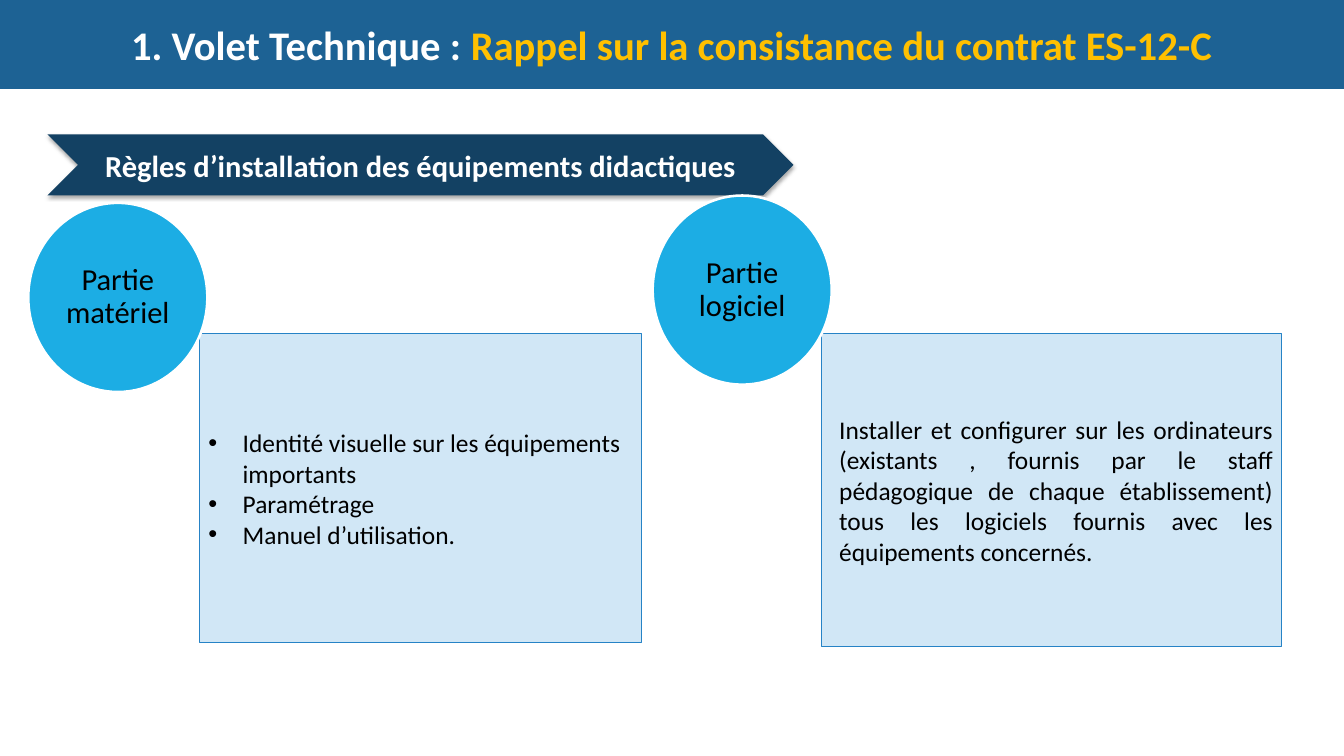
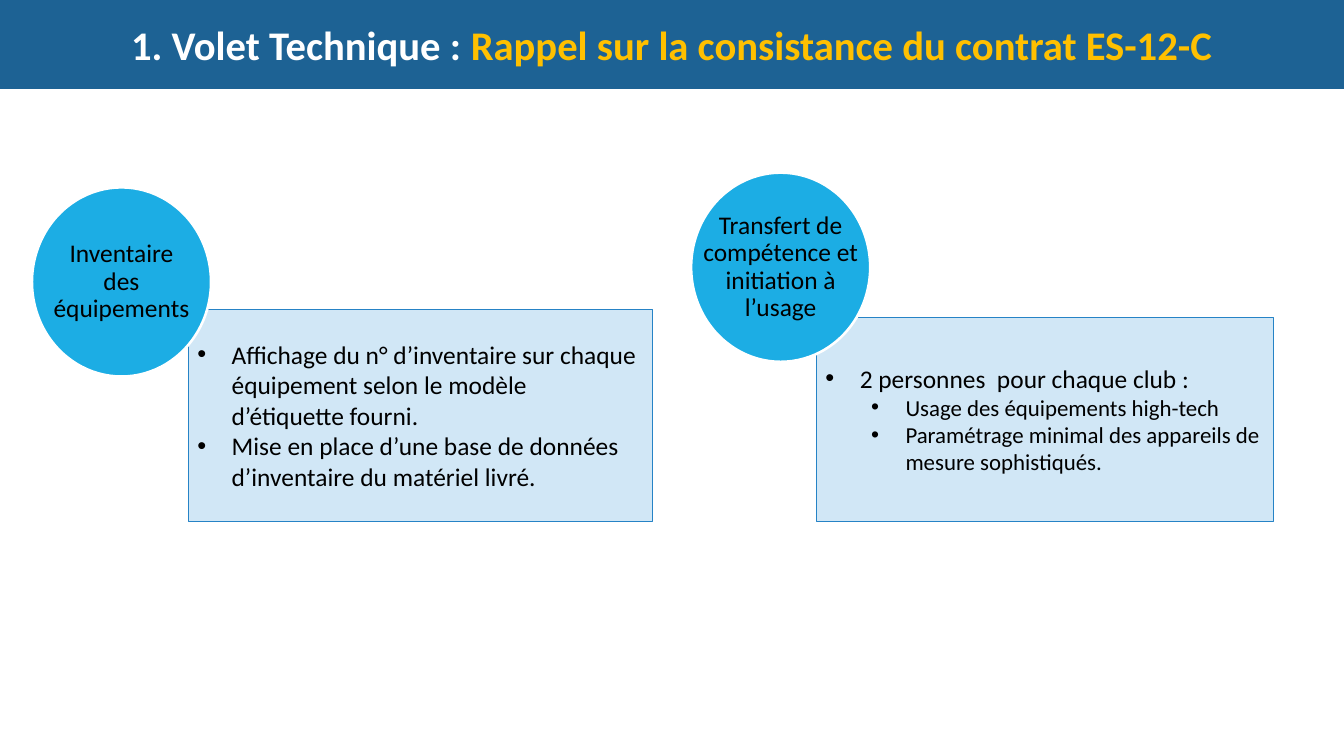
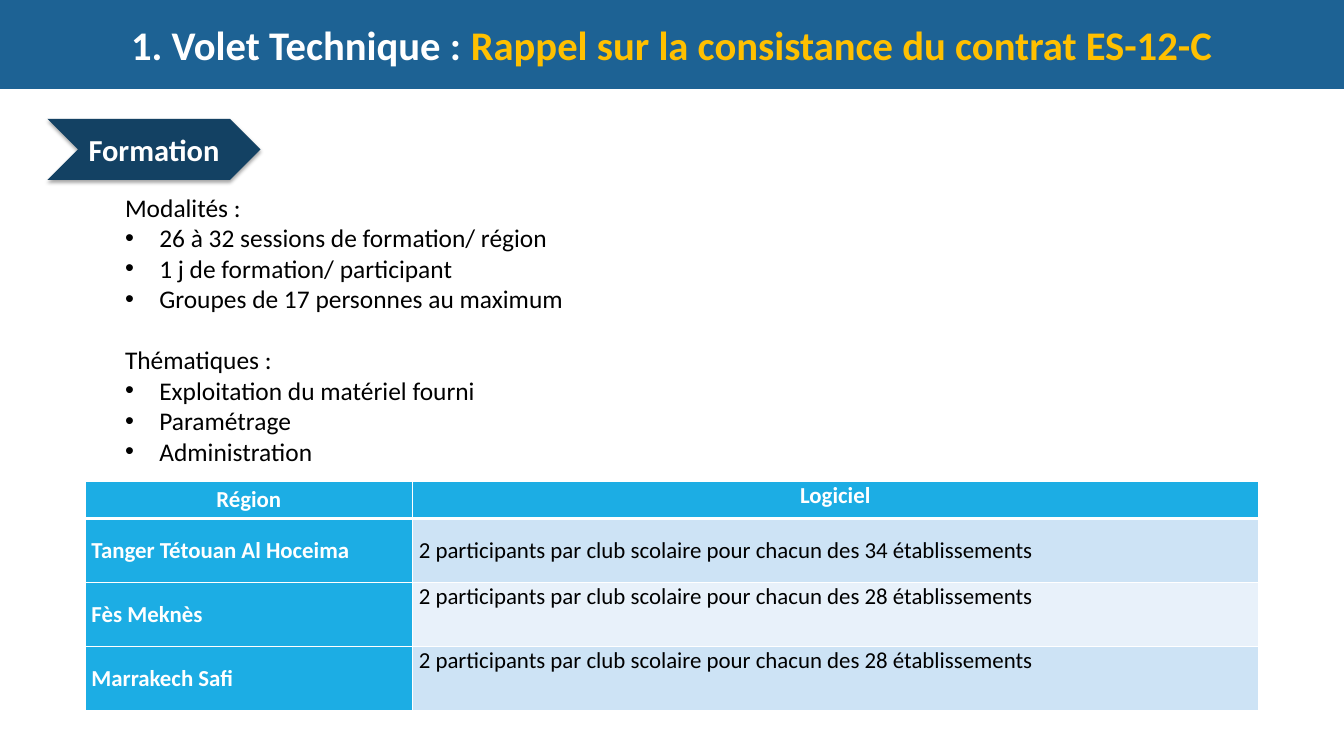
from lxml.etree import SubElement
from pptx import Presentation
from pptx.dml.color import RGBColor
from pptx.enum.shapes import MSO_SHAPE
from pptx.enum.text import MSO_ANCHOR, PP_ALIGN
from pptx.oxml import parse_xml
from pptx.oxml.ns import nsdecls, qn
from pptx.util import Pt

WIDTH, HEIGHT = 1058.4, 595.44
FONT = "Calibri"
COLORS = {
    "band": "1D6294", "accent": "FFC000", "chevron": "134163",
    "circle": "1CADE4", "card": "D1E7F6", "card_line": "2683C6",
    "row_dark": "CDE3F5", "row_light": "E8F1FA",
    "white": "FFFFFF", "black": "000000",
}

TITLE = [("1. Volet Technique : ", "white"),
         ("Rappel sur la consistance du contrat ES-12-C", "accent")]

# Paragraph styles: size, left margin, hanging indent, bullet, level, alignment
STYLES = {
    "plain": (20, 0, 0, False, 0, PP_ALIGN.LEFT),
    "bullet": (20, 27, -27, True, 0, PP_ALIGN.LEFT),
    "sub": (18, 63, -27, True, 1, PP_ALIGN.LEFT),
    "justified": (20, 7.2, 0, False, 0, PP_ALIGN.JUSTIFY),
}

CIRCLE_SIZE = (141, 149)
CHEVRON_LEFT, CHEVRON_HEIGHT = 37.4, 48.2

# Each topic: circle label, size and corner, then card box and paragraphs
INSTALLATION = {
    "chevron": ("Règles d’installation des équipements didactiques", 105.8, 587.5),
    "topics": [
        ("Partie\vmatériel", 24, (22.3, 159.8), (157, 262.8, 347.8, 243.4), [
            ("bullet", "Identité visuelle sur les équipements importants"),
            ("bullet", "Paramétrage"),
            ("bullet", "Manuel d’utilisation."),
        ]),
        ("Partie\vlogiciel", 24, (514, 154), (646.6, 262.8, 362.9, 246.2), [
            ("justified", "Installer et configurer sur les ordinateurs (existants , "
             "fournis par le staff pédagogique de chaque établissement) tous les "
             "logiciels fournis avec les équipements concernés."),
        ]),
    ],
}
SUPPORT = {
    "topics": [
        ("Inventaire\vdes\véquipements", 20, (25.2, 147.6), (148.3, 243.4, 365.8, 167), [
            ("bullet", "Affichage du n° d’inventaire sur chaque équipement selon "
             "le modèle d’étiquette fourni."),
            ("bullet", "Mise en place d’une base de données d’inventaire du "
             "matériel livré."),
        ]),
        ("Transfert de\vcompétence et\vinitiation à\vl’usage", 20, (544.3, 136),
         (643, 249.8, 360, 160.6), [
            ("bullet", "2 personnes  pour chaque club :"),
            ("sub", "Usage des équipements high-tech"),
            ("sub", "Paramétrage minimal des appareils de mesure sophistiqués."),
        ]),
    ],
}
TRAINING = {
    "chevron": ("Formation", 93.6, 167.8),
    "sections": [
        ("Modalités :", ["26 à 32 sessions de formation/ région",
                         "1 j de formation/ participant",
                         "Groupes de 17 personnes au maximum"]),
        ("Thématiques :", ["Exploitation du matériel fourni",
                           "Paramétrage", "Administration"]),
    ],
    "table": [
        ("Région", "Logiciel"),
        ("Tanger Tétouan Al Hoceima",
         "2 participants par club scolaire pour chacun des 34 établissements"),
        ("Fès Meknès",
         "2 participants par club scolaire pour chacun des 28 établissements"),
        ("Marrakech Safi",
         "2 participants par club scolaire pour chacun des 28 établissements"),
    ],
}
SECTIONS_BOX = (91.4, 147.6, 756, 225.4)
SECTION_GAP = 24
TABLE_CORNER = (67, 379.4)
COLUMN_WIDTHS = (257.8, 666)
ROW_HEIGHTS = (28.8, 50.4, 50.4, 50.4)


def rgb(name):
    return RGBColor.from_string(COLORS[name])


def set_font(font, size, color, bold=False):
    font.name, font.size, font.bold = FONT, Pt(size), bold
    font.color.rgb = rgb(color)


def add_shape(s, kind, box, fill, line=None, line_width=0.75):
    sp = s.shapes.add_shape(kind, *map(Pt, box))
    sp.shadow.inherit = False
    sp.fill.solid()
    sp.fill.fore_color.rgb = rgb(fill)
    if line:
        sp.line.color.rgb = rgb(line)
        sp.line.width = Pt(line_width)
    else:
        sp.line.fill.background()
    sp.text_frame.vertical_anchor = MSO_ANCHOR.MIDDLE
    return sp


def set_label(sp, text, size, color, bold=False):
    """Centre a short label that keeps its own line breaks."""
    tf = sp.text_frame
    tf.word_wrap = False
    tf.text = text
    p = tf.paragraphs[0]
    p.alignment = PP_ALIGN.CENTER
    set_font(p.font, size, color, bold)
    return p


def fill_paragraphs(tf, items):
    tf.word_wrap = True
    for i, (style, text) in enumerate(items):
        size, margin, indent, bullet, level, align = STYLES[style]
        p = tf.paragraphs[0] if i == 0 else tf.add_paragraph()
        p.text, p.level, p.alignment = text, level, align
        set_font(p.font, size, "black")
        pPr = p._p.get_or_add_pPr()
        pPr.set("marL", str(Pt(margin)))
        pPr.set("indent", str(Pt(indent)))
        if bullet:
            pPr.insert(0, parse_xml(f'<a:buChar {nsdecls("a")} char="•"/>'))
            pPr.insert(0, parse_xml(f'<a:buFont {nsdecls("a")} typeface="Arial"/>'))


def add_title(s):
    sp = add_shape(s, MSO_SHAPE.RECTANGLE, (0, 0, WIDTH, 70), "band")
    p = sp.text_frame.paragraphs[0]
    p.alignment = PP_ALIGN.CENTER
    for text, color in TITLE:
        r = p.add_run()
        r.text = text
        set_font(r.font, 32, color, True)


def add_chevron(s, text, top, width):
    sp = add_shape(s, MSO_SHAPE.CHEVRON,
                   (CHEVRON_LEFT, top, width, CHEVRON_HEIGHT), "chevron")
    effects = sp._element.spPr.find(qn("a:effectLst"))
    effects.append(parse_xml(
        f'<a:outerShdw {nsdecls("a")} blurRad="{Pt(3.1)}" dist="{Pt(1.8)}" '
        'dir="5400000" rotWithShape="0"><a:srgbClr val="000000">'
        '<a:alpha val="35000"/></a:srgbClr></a:outerShdw>'))
    set_label(sp, text, 24, "white", True)


def add_topic(s, label, size, corner, card_box, items):
    card = add_shape(s, MSO_SHAPE.RECTANGLE, card_box, "card", "card_line")
    fill_paragraphs(card.text_frame, items)
    circle = add_shape(s, MSO_SHAPE.OVAL, corner + CIRCLE_SIZE, "circle", "white", 2)
    set_label(circle, label, size, "black").line_spacing = 0.9


def add_sections(s, sections):
    items = []
    for heading, points in sections:
        items.append(("plain", heading))
        items += [("bullet", point) for point in points]
    tf = s.shapes.add_textbox(*map(Pt, SECTIONS_BOX)).text_frame
    fill_paragraphs(tf, items)
    for p, (style, _) in list(zip(tf.paragraphs, items))[1:]:
        if style == "plain":
            p.space_before = Pt(SECTION_GAP)


def set_borders(cell, **widths):
    tcPr = cell._tc.get_or_add_tcPr()
    for side in "LRTB":
        ln = SubElement(tcPr, qn(f"a:ln{side}"), w=str(Pt(widths.get(side, 1))))
        fill = SubElement(ln, qn("a:solidFill"))
        SubElement(fill, qn("a:srgbClr"), val=COLORS["white"])


def add_region_table(s, rows):
    size = sum(COLUMN_WIDTHS), sum(ROW_HEIGHTS)
    table = s.shapes.add_table(len(rows), len(COLUMN_WIDTHS),
                               *map(Pt, TABLE_CORNER + size)).table
    for column, width in zip(table.columns, COLUMN_WIDTHS):
        column.width = Pt(width)
    for i, (row, height) in enumerate(zip(rows, ROW_HEIGHTS)):
        table.rows[i].height = Pt(height)
        for j, text in enumerate(row):
            cell = table.cell(i, j)
            heading = i == 0 or j == 0
            set_borders(cell, B=3 if i == 0 else 1, T=3 if i == 1 else 1)
            cell.fill.solid()
            body = "row_dark" if i % 2 else "row_light"
            cell.fill.fore_color.rgb = rgb("circle" if heading else body)
            cell.margin_left = cell.margin_right = Pt(5)
            cell.margin_top = cell.margin_bottom = 0
            middle = j == 0 or i == 1
            cell.vertical_anchor = MSO_ANCHOR.MIDDLE if middle else MSO_ANCHOR.TOP
            cell.text = text
            p = cell.text_frame.paragraphs[0]
            p.alignment = PP_ALIGN.JUSTIFY if i else PP_ALIGN.CENTER
            set_font(p.font, 18, "white" if heading else "black", heading)


def main():
    prs = Presentation()
    prs.slide_width, prs.slide_height = Pt(WIDTH), Pt(HEIGHT)
    for content in (INSTALLATION, SUPPORT, TRAINING):
        s = prs.slides.add_slide(prs.slide_layouts[6])
        add_title(s)
        if "chevron" in content:
            add_chevron(s, *content["chevron"])
        for topic in content.get("topics", []):
            add_topic(s, *topic)
        if "sections" in content:
            add_sections(s, content["sections"])
        if "table" in content:
            add_region_table(s, content["table"])
    prs.save("out.pptx")


if __name__ == "__main__":
    main()
